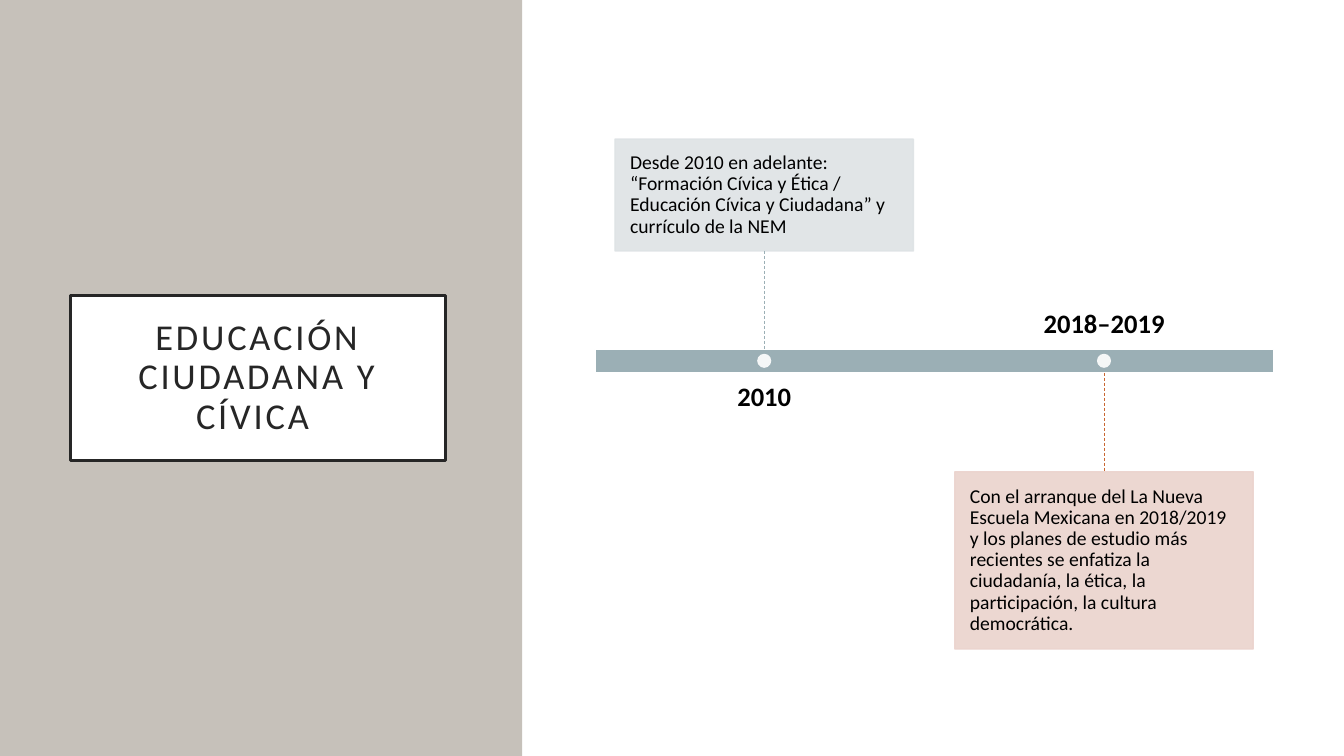
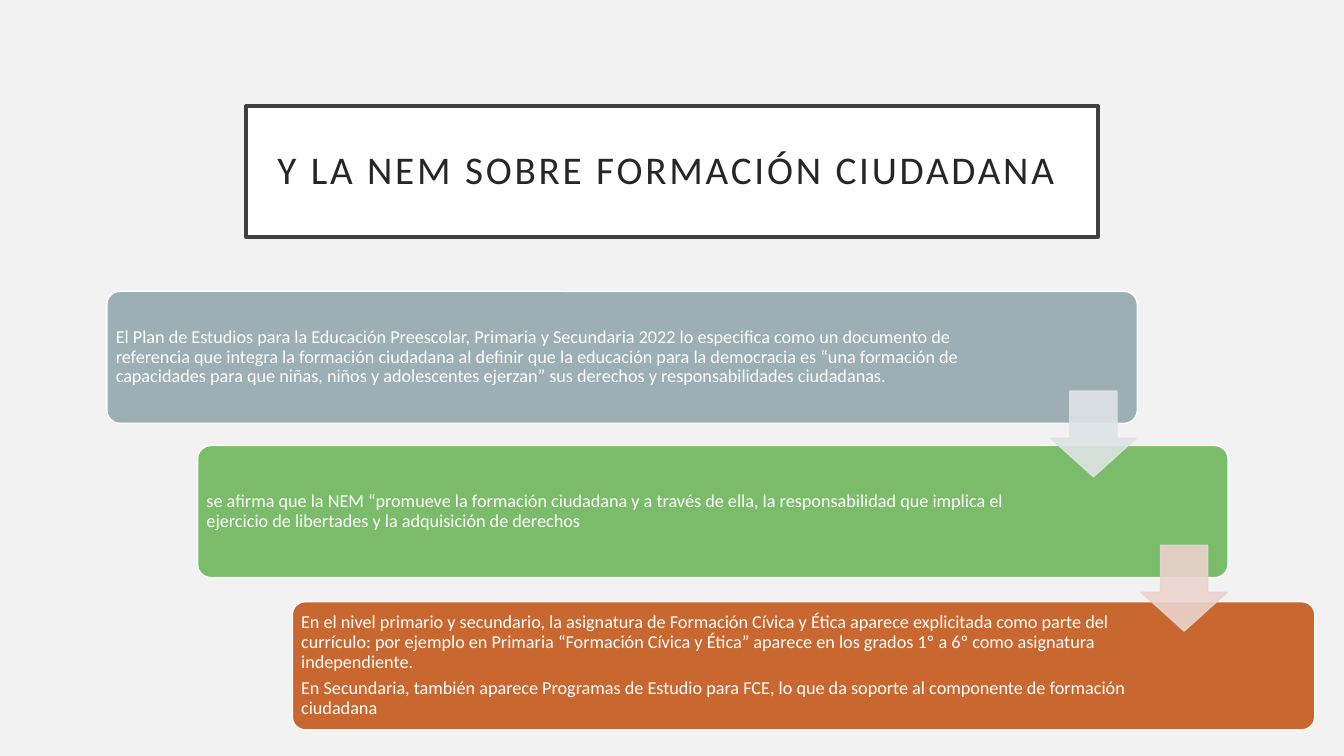
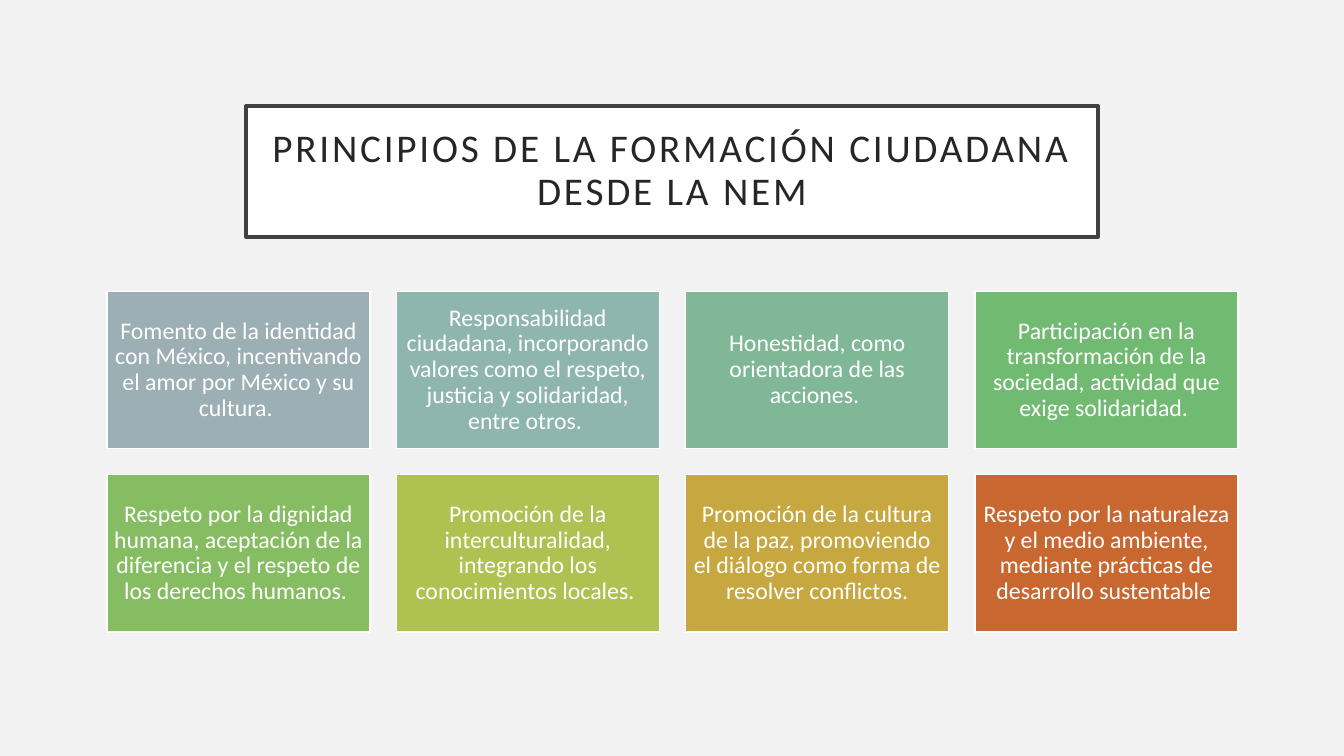
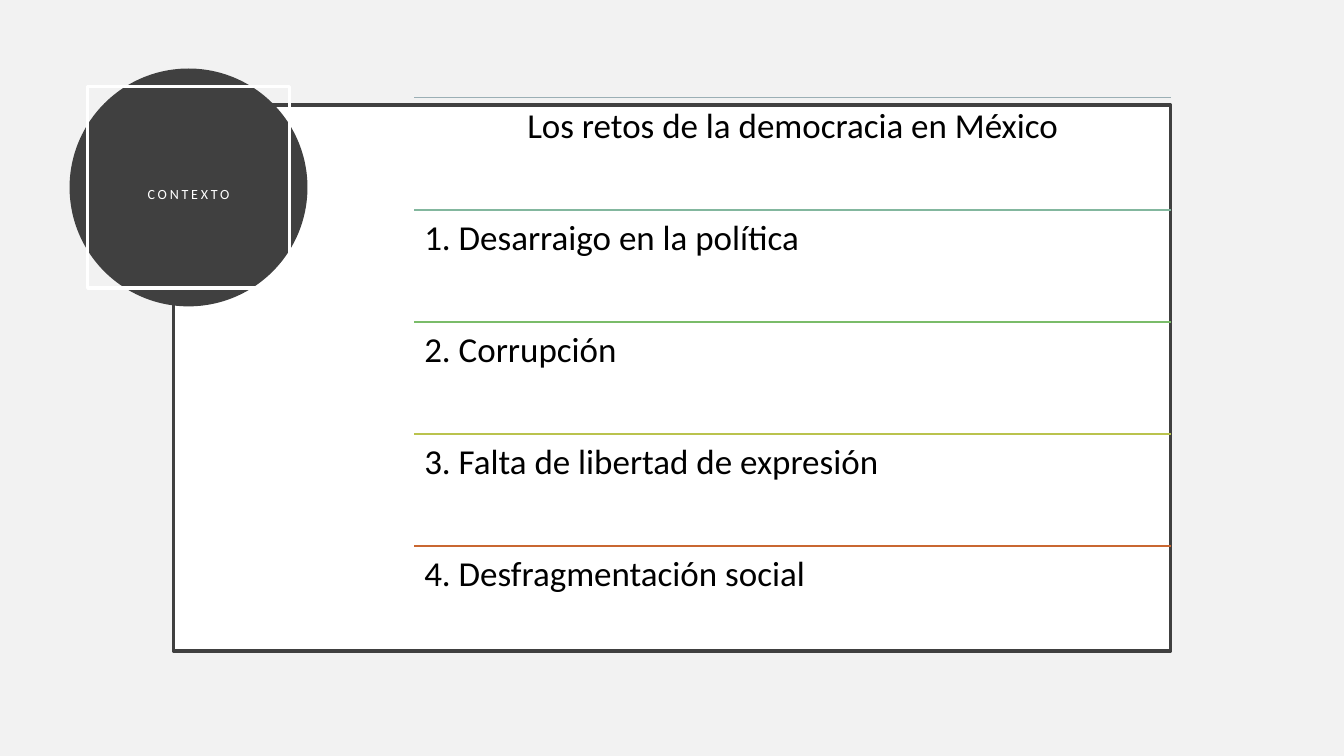
from dataclasses import dataclass

from lxml.etree import SubElement
from pptx import Presentation
from pptx.dml.color import RGBColor
from pptx.enum.dml import MSO_LINE
from pptx.enum.shapes import MSO_CONNECTOR, MSO_SHAPE as SHAPE
from pptx.enum.text import MSO_ANCHOR as ANCHOR, PP_ALIGN as ALIGN
from pptx.oxml.ns import qn
from pptx.util import Inches, Pt


@dataclass(frozen=True)
class Theme:
    font: str = "Calibri"
    white: str = "FFFFFF"
    black: str = "000000"
    ink: str = "262626"
    dark: str = "404040"
    paper: str = "F2F2F2"
    stone: str = "C6C1BA"
    slate: str = "9BAFB5"
    green: str = "7ABC69"
    rust: str = "C96731"
    pale_slate: str = "DEE3E5"
    pale_rust: str = "EBD3CD"
    principles: tuple = ("9BAFB5", "8EB6AF", "80B897", "71BA71",
                         "87BD62", "AEC151", "C6A740", "C96731")
    rules: tuple = ("9BAFB5", "83B79E", "7ABC69", "BAC34D", "C96731")
    title_size: int = 28
    side_title_size: int = 26
    badge_size: int = 10
    date_size: int = 19
    event_size: int = 14
    step_size: int = 13
    card_size: int = 17
    list_size: int = 25
    frame_width: float = 2.5
    dash_width: float = 0.5


class Deck:
    def __init__(self, theme):
        self.theme = theme
        self.presentation = Presentation()
        self.presentation.slide_width = Inches(13.33)
        self.presentation.slide_height = Inches(7.5)
        self.slide = None

    def new_slide(self, background):
        self.slide = self.presentation.slides.add_slide(self.presentation.slide_layouts[6])
        fill = self.slide.background.fill
        fill.solid()
        fill.fore_color.rgb = RGBColor.from_string(background)

    def shape(self, kind, box, fill=None, line=None, line_width=1, opacity=100, adjustments=()):
        shape = self.slide.shapes.add_shape(kind, *map(Inches, box))
        shape.shadow.inherit = False
        for index, value in enumerate(adjustments):
            shape.adjustments[index] = value
        if fill:
            shape.fill.solid()
            shape.fill.fore_color.rgb = RGBColor.from_string(fill)
        else:
            shape.fill.background()
        if line:
            shape.line.color.rgb = RGBColor.from_string(line)
            shape.line.width = Pt(line_width)
        else:
            shape.line.fill.background()
        if opacity < 100:
            for color in shape.element.spPr.iter(qn("a:srgbClr")):
                SubElement(color, qn("a:alpha")).set("val", str(opacity * 1000))
        return shape

    def put_text(self, shape, paragraphs, size, color, align=ALIGN.LEFT, anchor=ANCHOR.MIDDLE,
                 margins=(0, 0, 0, 0), bold=False, tracking=0):
        """Fill a shape with text; margins run left, top, right, bottom."""
        frame = shape.text_frame
        frame.word_wrap = True
        frame.vertical_anchor = anchor
        (frame.margin_left, frame.margin_top,
         frame.margin_right, frame.margin_bottom) = map(Inches, margins)
        frame.text = "\n".join(paragraphs)
        for paragraph in frame.paragraphs:
            paragraph.alignment = align
            paragraph.line_spacing = 0.9
            font = paragraph.font
            font.name, font.size, font.bold = self.theme.font, Pt(size), bold
            font.color.rgb = RGBColor.from_string(color)
            if tracking:
                properties = paragraph._p.get_or_add_pPr().find(qn("a:defRPr"))
                properties.set("spc", str(tracking * 100))
        for paragraph in frame.paragraphs[:-1]:
            paragraph.space_after = Pt(5)

    def text(self, box, content, size, **style):
        shape = self.slide.shapes.add_textbox(*map(Inches, box))
        self.put_text(shape, [content], size, self.theme.black, **style)

    def line(self, start, end, color, width=1, dashed=False):
        connector = self.slide.shapes.add_connector(
            MSO_CONNECTOR.STRAIGHT, *map(Inches, start + end))
        connector.line.color.rgb = RGBColor.from_string(color)
        connector.line.width = Pt(width)
        if dashed:
            connector.line.dash_style = MSO_LINE.DASH
        SubElement(connector.element.spPr, qn("a:effectLst"))

    def title(self, content, box=(2.44, 1.05, 8.45, 1.3), size=None, line=None):
        theme = self.theme
        shape = self.shape(SHAPE.RECTANGLE, box, theme.white, line or theme.dark,
                           theme.frame_width)
        self.put_text(shape, [content], size or theme.title_size, theme.ink,
                      align=ALIGN.CENTER, margins=(0.2,) * 4, tracking=2)

    def event(self, center, box_top, box_height, date, content, fill, line, above):
        """Add a date on the timeline with its box above or below the bar."""
        theme = self.theme
        bar_top, bar_bottom = 3.47, 3.7
        box = self.shape(SHAPE.RECTANGLE, (center - 1.48, box_top, 2.96, box_height),
                         fill, fill, opacity=90)
        self.put_text(box, [content], theme.event_size, theme.black, margins=(0.15,) * 4)
        if above:
            ends, date_top, anchor = (box_top + box_height, bar_top), 3.8, ANCHOR.TOP
        else:
            ends, date_top, anchor = (bar_bottom, box_top), 2.72, ANCHOR.BOTTOM
        self.line((center, ends[0]), (center, ends[1]), line, theme.dash_width, dashed=True)
        self.text((center - 1.35, date_top, 2.7, 0.65), date, theme.date_size,
                  align=ALIGN.CENTER, anchor=anchor, bold=True)
        self.shape(SHAPE.OVAL, (center - 0.07, 3.51, 0.14, 0.14), theme.white, opacity=90)


def timeline_slide(deck):
    theme = deck.theme
    deck.new_slide(theme.white)
    deck.shape(SHAPE.RECTANGLE, (0, 0, 5.18, 7.5), theme.stone)
    deck.title("EDUCACIÓN CIUDADANA Y CÍVICA ", (0.7, 2.93, 3.72, 1.64),
               theme.side_title_size, theme.ink)
    deck.shape(SHAPE.RECTANGLE, (5.9, 3.47, 6.73, 0.23), theme.slate, theme.white)
    deck.event(7.58, 1.38, 1.11, "2010",
               "Desde 2010 en adelante: “Formación Cívica y Ética / Educación Cívica y "
               "Ciudadana” y currículo de la NEM",
               theme.pale_slate, theme.slate, above=True)
    deck.event(10.95, 4.68, 1.76, "2018–2019",
               "Con el arranque del La Nueva Escuela Mexicana en 2018/2019 y los planes de "
               "estudio más recientes se enfatiza la ciudadanía, la ética, la participación, "
               "la cultura democrática.",
               theme.pale_rust, theme.rust, above=False)


def steps_slide(deck):
    theme = deck.theme
    deck.new_slide(theme.paper)
    deck.title("Y LA NEM SOBRE FORMACIÓN CIUDADANA ")
    steps = (
        ((1.06, 2.89, 10.22, 1.31), theme.slate, 1.4, [
            "El Plan de Estudios para la Educación Preescolar, Primaria y Secundaria 2022 lo "
            "especifica como un documento de referencia que integra la formación ciudadana al "
            "definir que la educación para la democracia es “una formación de capacidades para "
            "que niñas, niños y adolescentes ejerzan” sus derechos y responsabilidades "
            "ciudadanas."]),
        ((1.96, 4.42, 10.22, 1.31), theme.green, 1.8, [
            "se afirma que la NEM “promueve la formación ciudadana y a través de ella, la "
            "responsabilidad que implica el ejercicio de libertades y la adquisición de "
            "derechos"]),
        ((2.9, 5.97, 10.14, 1.27), theme.rust, 1.8, [
            "En el nivel primario y secundario, la asignatura de Formación Cívica y Ética "
            "aparece explicitada como parte del currículo: por ejemplo en Primaria “Formación "
            "Cívica y Ética” aparece en los grados 1º a 6º como asignatura independiente.",
            "En Secundaria, también aparece Programas de Estudio para FCE, lo que da soporte "
            "al componente de formación ciudadana"]),
    )
    for box, fill, right_margin, paragraphs in steps:
        step = deck.shape(SHAPE.ROUNDED_RECTANGLE, box, fill, theme.white, adjustments=[0.1])
        deck.put_text(step, paragraphs, theme.step_size, theme.white,
                      margins=(0.05, 0.05, right_margin, 0.05))
    for left, top, color in ((10.42, 3.88, theme.pale_slate), (11.32, 5.41, theme.pale_rust)):
        deck.shape(SHAPE.DOWN_ARROW, (left, top, 0.85, 0.85), color, color,
                   opacity=90, adjustments=[0.55, 0.45])


def principles_slide(deck):
    theme = deck.theme
    deck.new_slide(theme.paper)
    deck.title("PRINCIPIOS DE LA FORMACIÓN CIUDADANA DESDE LA NEM")
    principles = (
        "Fomento de la identidad con México, incentivando el amor por México y su cultura. ",
        "Responsabilidad ciudadana, incorporando valores como el respeto, justicia y "
        "solidaridad, entre otros. ",
        "Honestidad, como orientadora de las acciones. ",
        "Participación en la transformación de la sociedad, actividad que exige solidaridad. ",
        "Respeto por la dignidad humana, aceptación de la diferencia y el respeto de los "
        "derechos humanos. ",
        "Promoción de la interculturalidad, integrando los conocimientos locales. ",
        "Promoción de la cultura de la paz, promoviendo el diálogo como forma de resolver "
        "conflictos.",
        "Respeto por la naturaleza y el medio ambiente, mediante prácticas de desarrollo "
        "sustentable ",
    )
    width, height, gap = 2.61, 1.56, 0.26
    for index, (content, fill) in enumerate(zip(principles, theme.principles)):
        row, column = divmod(index, 4)
        box = (1.06 + column * (width + gap), 2.89 + row * (height + gap), width, height)
        card = deck.shape(SHAPE.RECTANGLE, box, fill, theme.white)
        deck.put_text(card, [content], theme.card_size, theme.white,
                      align=ALIGN.CENTER, margins=(0.07,) * 4)


def challenges_slide(deck):
    theme = deck.theme
    deck.new_slide(theme.paper)
    deck.shape(SHAPE.RECTANGLE, (1.72, 1.04, 9.89, 5.42), theme.white, theme.dark,
               theme.frame_width)
    deck.shape(SHAPE.OVAL, (0.69, 0.68, 2.36, 2.36), theme.dark)
    badge = deck.shape(SHAPE.RECTANGLE, (0.87, 0.86, 2, 2), line=theme.white,
                       line_width=theme.frame_width)
    deck.put_text(badge, ["CONTEXTO"], theme.badge_size, theme.white, align=ALIGN.CENTER,
                  margins=(0.2, 0.35, 0.2, 0.2), tracking=2)
    rows = ("Los retos de la democracia en México", "1. Desarraigo en la política",
            "2. Corrupción", "3. Falta de libertad de expresión",
            "4. Desfragmentación social")
    left, width, row_height = 4.11, 7.5, 5.56 / len(rows)
    for index, (content, color) in enumerate(zip(rows, theme.rules)):
        top = 0.97 + index * row_height
        deck.line((left, top), (left + width, top), color)
        deck.text((left, top, width, row_height), content, theme.list_size,
                  align=ALIGN.LEFT if index else ALIGN.CENTER, anchor=ANCHOR.TOP,
                  margins=(0.1,) * 4)


def main():
    deck = Deck(Theme())
    for build in (timeline_slide, steps_slide, principles_slide, challenges_slide):
        build(deck)
    deck.presentation.save("out.pptx")


if __name__ == "__main__":
    main()
